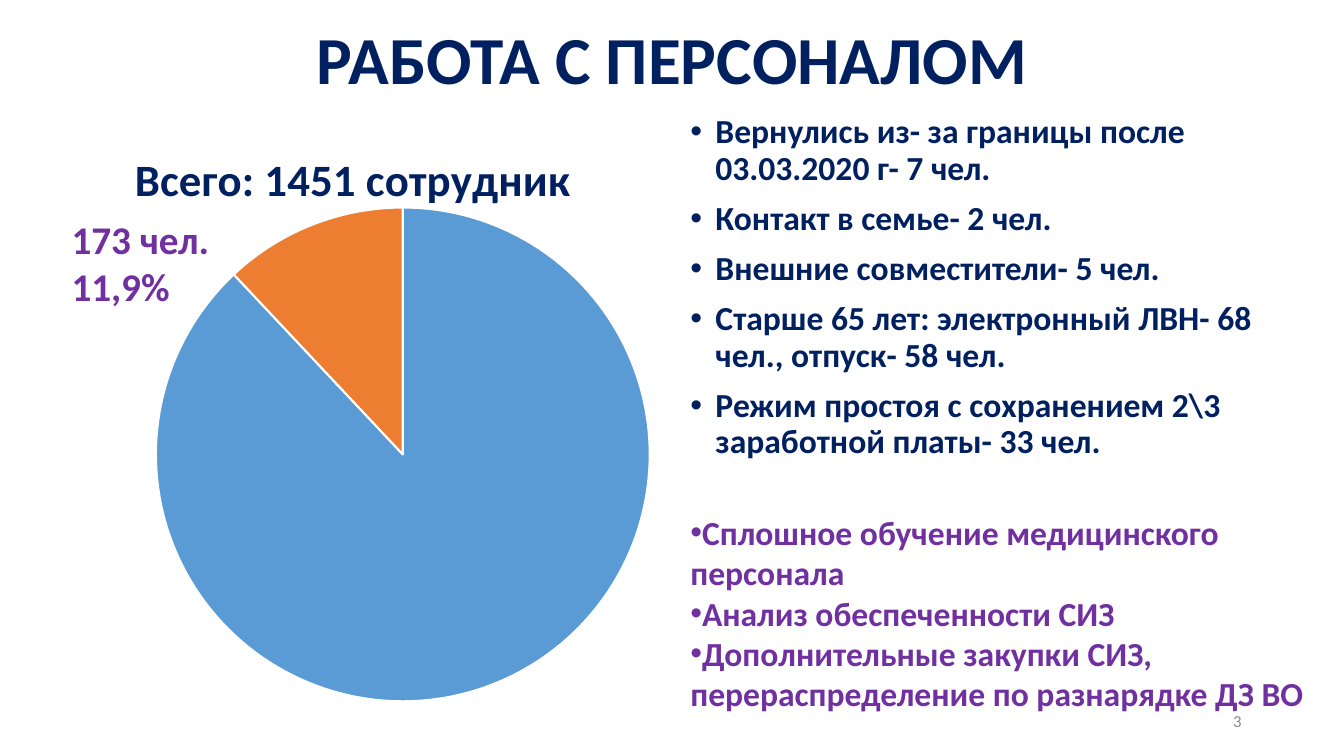
import pptx
import pptx.chart.data
import pptx.dml.color
import pptx.enum.chart
import pptx.enum.text
import pptx.oxml
import pptx.oxml.ns
import pptx.util
from pptx.util import Pt

FONT = "Calibri"
COLORS = {"navy": "002060", "purple": "7030A0", "gray": "8C8C8C",
          "blue": "5B9BD5", "orange": "ED7D31", "white": "FFFFFF", "black": "000000"}

TITLE = "РАБОТА С ПЕРСОНАЛОМ"
CHART_TITLE = "Всего: 1451 сотрудник"
STAFF_SHARES = [("1", 88, "blue"), ("2", 12, "orange")]
ABSENT_LABEL = ["173 чел.", "11,9%"]
ABSENCE_REASONS = [
    "Вернулись из- за границы после 03.03.2020 г- 7 чел.",
    "Контакт в семье- 2 чел.",
    "Внешние совместители- 5 чел.",
    "Старше 65 лет: электронный ЛВН- 68 чел., отпуск- 58 чел.",
    "Режим простоя с сохранением 2\\3 заработной платы- 33 чел.",
]
MEASURES = [
    "Сплошное обучение медицинского персонала",
    "Анализ обеспеченности СИЗ",
    "Дополнительные закупки СИЗ, перераспределение по разнарядке ДЗ ВО",
]
PAGE_NUMBER = "3"

COLUMN_TOP = 78.5
RIGHT_COLUMN = 486
COLUMN_WIDTH = 450.7
CHART_FRAME = (23, COLUMN_TOP, COLUMN_WIDTH, 433.4)


def rgb(name):
    return pptx.dml.color.RGBColor.from_string(COLORS[name])


def style_font(font, size, color, bold=True):
    font.name, font.size, font.bold = FONT, Pt(size), bold
    font.color.rgb = rgb(color)


def add_bullet(para, margin, indent):
    properties = para._p.get_or_add_pPr()
    properties.set("marL", str(Pt(margin)))
    properties.set("indent", str(Pt(indent)))
    namespace = pptx.oxml.ns.nsdecls("a")
    properties.append(pptx.oxml.parse_xml(f'<a:buFont {namespace} typeface="Arial"/>'))
    properties.append(pptx.oxml.parse_xml(f'<a:buChar {namespace} char="•"/>'))


def add_text(page, frame, lines, size, color, bold=True, align="LEFT", anchor="TOP",
             bullet=None, line_spacing=None, gap=0):
    """Add a text box with one paragraph per line; bullet is (margin, indent)."""
    box = page.shapes.add_textbox(*map(Pt, frame))
    text = box.text_frame
    text.word_wrap = True
    text.vertical_anchor = getattr(pptx.enum.text.MSO_ANCHOR, anchor)
    for index, line in enumerate(lines):
        para = text.paragraphs[0] if index == 0 else text.add_paragraph()
        para.alignment = getattr(pptx.enum.text.PP_ALIGN, align)
        if line_spacing:
            para.line_spacing = line_spacing
        if index and gap:
            para.space_before = Pt(gap)
        if bullet:
            add_bullet(para, *bullet)
        span = para.add_run()
        span.text = line
        style_font(span.font, size, color, bold)


def manual_layout(x, y, width=None, height=None):
    """Build a chart layout from fractions of the chart frame."""
    parts = ['<c:layoutTarget val="inner"/>'] if width else []
    parts += ['<c:xMode val="edge"/>', '<c:yMode val="edge"/>']
    sides = {"x": x, "y": y, "w": width, "h": height}
    parts += [f'<c:{tag} val="{value}"/>' for tag, value in sides.items() if value]
    return pptx.oxml.parse_xml(
        f'<c:layout {pptx.oxml.ns.nsdecls("c")}><c:manualLayout>'
        f'{"".join(parts)}</c:manualLayout></c:layout>')


def set_layout(element, layout, position):
    for old in element.findall(pptx.oxml.ns.qn("c:layout")):
        element.remove(old)
    element.insert(position, layout)


def add_staff_pie(page):
    data = pptx.chart.data.CategoryChartData()
    data.categories = [name for name, _, _ in STAFF_SHARES]
    data.add_series(CHART_TITLE, [share for _, share, _ in STAFF_SHARES])
    chart = page.shapes.add_chart(pptx.enum.chart.XL_CHART_TYPE.PIE,
                                  *map(Pt, CHART_FRAME), data).chart
    style_font(chart.font, 10, "black", False)
    chart.has_legend = False
    chart.has_title = True
    span = chart.chart_title.text_frame.paragraphs[0].add_run()
    span.text = CHART_TITLE
    style_font(span.font, 32, "navy")
    chart.chart_title.include_in_layout = False
    set_layout(chart.chart_title._element, manual_layout(0.15, 0.05), 1)

    plot = chart.plots[0]
    plot.vary_by_categories = True
    set_layout(plot._element.getparent(), manual_layout(0.196, 0.161, 0.783, 0.814), 0)
    for index, (_, _, color) in enumerate(STAFF_SHARES):
        slice_format = plot.series[0].points[index].format
        slice_format.fill.solid()
        slice_format.fill.fore_color.rgb = rgb(color)
        slice_format.line.color.rgb = rgb("white")
        slice_format.line.width = Pt(1.5)


def main():
    deck = pptx.Presentation()
    deck.slide_width, deck.slide_height = Pt(960), Pt(540)
    page = deck.slides.add_slide(deck.slide_layouts[6])
    add_text(page, (66, 11, 828, 67.5), [TITLE], 48, "navy",
             align="CENTER", anchor="MIDDLE", line_spacing=0.9)
    add_staff_pie(page)
    add_text(page, (RIGHT_COLUMN, COLUMN_TOP, COLUMN_WIDTH, 263.5), ABSENCE_REASONS, 24,
             "navy", bullet=(18, -18), line_spacing=0.9, gap=10)
    add_text(page, (678, 500.5, 216, 28.8), [PAGE_NUMBER], 12, "gray", bold=False,
             align="RIGHT", anchor="MIDDLE")
    add_text(page, (44, 150.5, 123, 75), ABSENT_LABEL, 28, "purple")
    add_text(page, (RIGHT_COLUMN, 362, 461, 152.6), MEASURES, 24, "purple",
             bullet=(0, -22.5))
    deck.save("out.pptx")


if __name__ == "__main__":
    main()
